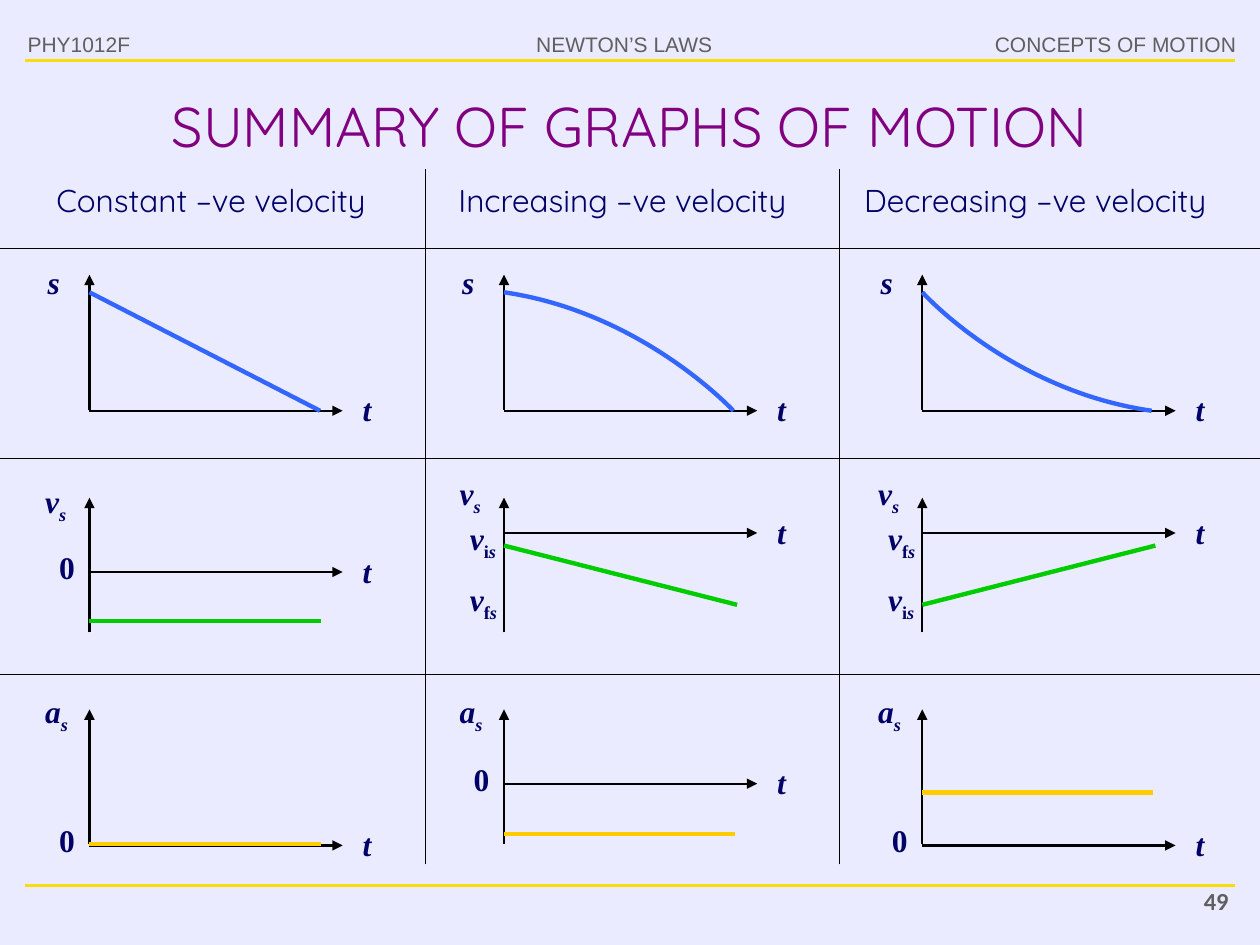
from lxml import etree
from pptx import Presentation
from pptx.dml.color import RGBColor
from pptx.enum import shapes, text
from pptx.oxml import ns
from pptx.util import Inches, Pt

LAVENDER = RGBColor(0xEB, 0xEB, 0xFF)
YELLOW = RGBColor(0xF8, 0xDC, 0x0E)
GRAY = RGBColor(0x5F, 0x5F, 0x5F)
PURPLE = RGBColor(0x80, 0x00, 0x80)
NAVY = RGBColor(0x00, 0x00, 0x66)
BLACK = RGBColor(0x00, 0x00, 0x00)
BLUE = RGBColor(0x33, 0x66, 0xFF)
GREEN = RGBColor(0x00, 0xCC, 0x00)
GOLD = RGBColor(0xFF, 0xCC, 0x00)

LEFT, CENTER, RIGHT = text.PP_ALIGN.LEFT, text.PP_ALIGN.CENTER, text.PP_ALIGN.RIGHT
AXIS_HEIGHT, AXIS_WIDTH = 1.07, 2.01

S = [("s", True, False)]
T = [("t", True, False)]
V = [("v", True, False), ("s", True, True)]
A = [("a", True, False), ("s", True, True)]
ZERO = [("0", False, False)]
V_INITIAL = [("v", True, False), ("i", False, True), ("s", True, True)]
V_FINAL = [("v", True, False), ("f", False, True), ("s", True, True)]

COLUMNS = [
    ("Constant –ve velocity", 0.15, 0.71),
    ("Increasing –ve velocity", 3.34, 4.0),
    ("Decreasing –ve velocity", 6.56, 7.32),
]
ROW_TOPS = [2.18, 3.95, 5.63]
DIVIDERS_X = [3.38, 6.66]
DIVIDERS_Y = [1.97, 3.64, 5.35]

# Each graph: quantity, label offset, time axis offset, marks, colour, trace
GRAPHS = [
    [
        (S, (-0.63, -0.17), 1.08, [], BLUE, [(0, 0.14), (1.83, 1.08)]),
        (S, (-0.63, -0.17), 1.08, [], BLUE,
         [(0, 0.14), (1.1, 0.3), (1.82, 1.08), (1.82, 1.08)]),
        (S, (-0.63, -0.17), 1.08, [], BLUE,
         [(1.82, 1.08), (0.7, 0.92), (0, 0.14), (0, 0.14)]),
    ],
    [
        (V, (-0.65, -0.21), 0.59, [(ZERO, -0.54, 0.32)], GREEN, [(0, 0.98), (1.84, 0.98)]),
        (V, (-0.65, -0.27), 0.28, [(V_INITIAL, -0.57, 0.09), (V_FINAL, -0.57, 0.57)],
         GREEN, [(0, 0.38), (1.85, 0.85)]),
        (V, (-0.65, -0.27), 0.28, [(V_FINAL, -0.57, 0.09), (V_INITIAL, -0.57, 0.57)],
         GREEN, [(0, 0.85), (1.85, 0.38)]),
    ],
    [
        (A, (-0.65, -0.22), 1.08, [(ZERO, -0.54, 0.81)], GOLD, [(0, 1.07), (1.84, 1.07)]),
        (A, (-0.65, -0.22), 0.59, [(ZERO, -0.54, 0.32)], GOLD, [(0, 0.99), (1.83, 0.99)]),
        (A, (-0.65, -0.22), 1.08, [(ZERO, -0.54, 0.81)], GOLD, [(0, 0.66), (1.83, 0.66)]),
    ],
]


def add_line(parent, start, end, color, width, arrow=False):
    line = parent.add_connector(shapes.MSO_CONNECTOR.STRAIGHT,
                                *[Inches(n) for n in (*start, *end)])
    line.line.color.rgb = color
    line.line.width = Pt(width)
    if arrow:
        etree.SubElement(line.line._get_or_add_ln(), ns.qn("a:tailEnd"), type="triangle")
    etree.SubElement(line._element.spPr, ns.qn("a:effectLst"))


def add_curve(parent, points, color, width):
    start, *controls = [(Inches(x), Inches(y)) for x, y in points]
    builder = parent.build_freeform(*start)
    builder.add_line_segments(controls, close=False)
    sp = builder.convert_to_shape()
    sp.shadow.inherit = False
    sp.fill.background()
    sp.line.color.rgb = color
    sp.line.width = Pt(width)
    segments = list(sp._element.iter(ns.qn("a:lnTo")))
    bezier = etree.SubElement(segments[0].getparent(), ns.qn("a:cubicBezTo"))
    for segment in segments:
        bezier.append(segment[0])
        segment.getparent().remove(segment)


def add_text(parent, box, runs, size, font, color, align=LEFT, bold=False,
             wrap=True, indent=0, spacing=None):
    sp = parent.add_textbox(*[Inches(n) for n in box])
    tf = sp.text_frame
    tf.word_wrap = wrap
    p = tf.paragraphs[0]
    p.alignment = align
    if indent:
        p._p.get_or_add_pPr().set("marL", str(Inches(indent)))
    if spacing:
        p.line_spacing = spacing
    p.font.size, p.font.name, p.font.bold = Pt(size), font, bold
    p.font.color.rgb = color
    for content, italic, subscript in runs:
        r = p.add_run()
        r.text = content
        if italic:
            r.font.italic = True
        if subscript:
            r.font._element.set("baseline", "-25000")
    return tf


def plain(content):
    return [(content, False, False)]


def add_symbol(parent, x, y, runs, width=0.65):
    add_text(parent, (x, y, width, 0.43), runs, 18, "Times New Roman", NAVY,
             bold=True, indent=0.2, spacing=1.1)


def add_frame(slide):
    for y in (0.48, 7.03):
        add_line(slide.shapes, (0.2, y), (9.8, y), YELLOW, 1.75)
    for content, box, align, wrap in [
        ("PHY1012F", (0.12, 0.2, 1.18, 0.32), LEFT, True),
        ("NEWTON’S LAWS", (4.15, 0.2, 1.61, 0.3), CENTER, False),
        ("CONCEPTS OF MOTION", (7.79, 0.2, 2.12, 0.3), RIGHT, False),
    ]:
        add_text(slide.shapes, box, plain(content), 12, "Arial", GRAY, align, wrap=wrap)
    add_text(slide.shapes, (8.82, 6.98, 1.03, 0.37), plain("49"), 14, "Calibri", GRAY,
             RIGHT, bold=True)
    tf = add_text(slide.shapes, (0.5, 0.63, 9, 0.72), plain("SUMMARY OF GRAPHS OF MOTION"),
                  32, "Quicksand", PURPLE, CENTER)
    tf.vertical_anchor = text.MSO_ANCHOR.MIDDLE


def add_grid(slide):
    for y in DIVIDERS_Y:
        add_line(slide.shapes, (0, y), (10, y), BLACK, 0.5)
    for x in DIVIDERS_X:
        add_line(slide.shapes, (x, 6.86), (x, 1.34), BLACK, 0.5)
    for heading, x, _ in COLUMNS:
        add_text(slide.shapes, (x, 1.36, 3.4, 0.47), plain(heading), 18, "Quicksand", NAVY,
                 indent=0.2, spacing=1.1)


def add_graph(slide, x, y, graph):
    quantity, (label_dx, label_dy), time_dy, marks, color, trace = graph
    axes = slide.shapes.add_group_shape().shapes
    time_y = y + time_dy
    add_line(axes, (x, time_y), (x + AXIS_WIDTH, time_y), BLACK, 1.25, arrow=True)
    add_line(axes, (x, y + AXIS_HEIGHT), (x, y), BLACK, 1.25, arrow=True)
    add_symbol(axes, x + 1.87, time_y - 0.24, T, width=0.51)
    add_symbol(axes, x + label_dx, y + label_dy, quantity)
    for runs, dx, dy in marks:
        add_symbol(axes, x + dx, y + dy, runs)
    points = [(x + dx, y + dy) for dx, dy in trace]
    if len(points) == 2:
        add_line(slide.shapes, *points, color, 2.5)
    else:
        add_curve(slide.shapes, points, color, 2.5)


def main():
    prs = Presentation()
    prs.slide_width, prs.slide_height = Inches(10), Inches(7.5)
    slide = prs.slides.add_slide(prs.slide_layouts[6])
    slide.background.fill.solid()
    slide.background.fill.fore_color.rgb = LAVENDER
    add_frame(slide)
    add_grid(slide)
    for y, row in zip(ROW_TOPS, GRAPHS):
        for (_, _, x), graph in zip(COLUMNS, row):
            add_graph(slide, x, y, graph)
    prs.save("out.pptx")


if __name__ == "__main__":
    main()
